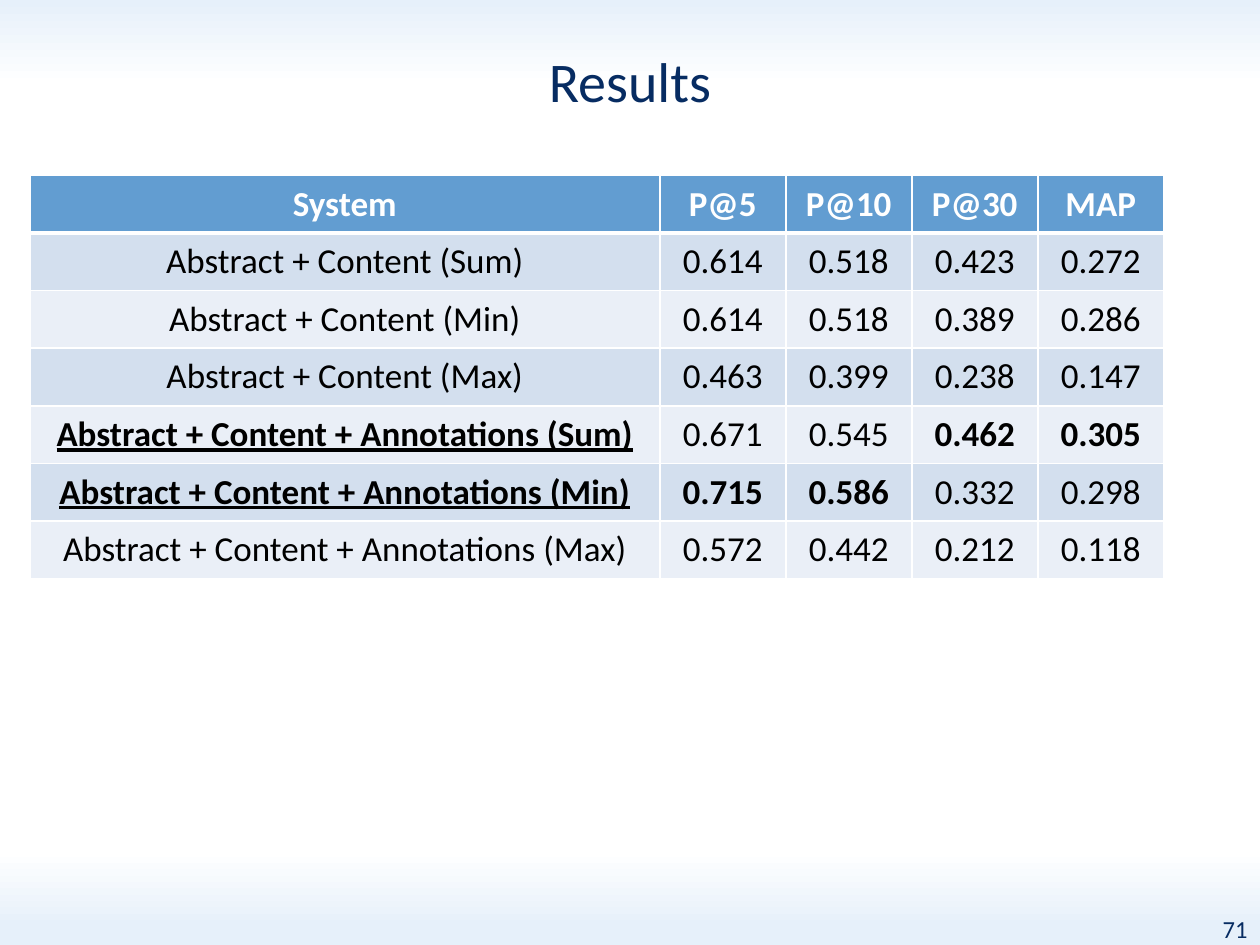
from lxml import etree
from pptx import Presentation
from pptx.dml.color import RGBColor
from pptx.enum.text import MSO_ANCHOR, PP_ALIGN
from pptx.oxml.ns import qn
from pptx.util import Cm, Pt

CENTER, RIGHT = PP_ALIGN.CENTER, PP_ALIGN.RIGHT
MIDDLE = MSO_ANCHOR.MIDDLE

NAVY = RGBColor(0x07, 0x2C, 0x62)
WHITE = RGBColor(0xFF, 0xFF, 0xFF)
BLACK = RGBColor(0x00, 0x00, 0x00)
PALE_BLUE = RGBColor(0xE6, 0xF0, 0xFA)
HEADER_BLUE = RGBColor(0x62, 0x9D, 0xD1)
BANDS = (RGBColor(0xD3, 0xDF, 0xEE), RGBColor(0xEA, 0xEF, 0xF7))

BACKGROUND_STOPS = ((0, PALE_BLUE), (9, WHITE), (90, WHITE), (98, PALE_BLUE))
COLUMN_WIDTHS = (12.7, 2.54, 2.54, 2.54, 2.54)
HEADERS = ("System", "P@5", "P@10", "P@30", "MAP")
RESULTS = (
    ("Abstract + Content (Sum)", 0.614, 0.518, 0.423, 0.272),
    ("Abstract + Content (Min)", 0.614, 0.518, 0.389, 0.286),
    ("Abstract + Content (Max)", 0.463, 0.399, 0.238, 0.147),
    ("Abstract + Content + Annotations (Sum)", 0.671, 0.545, 0.462, 0.305),
    ("Abstract + Content + Annotations (Min)", 0.715, 0.586, 0.332, 0.298),
    ("Abstract + Content + Annotations (Max)", 0.572, 0.442, 0.212, 0.118),
)


class SlideBuilder:
    font = "Calibri"
    spacing = 0.93

    def __init__(self, prs):
        self.slide = prs.slides.add_slide(prs.slide_layouts[5])

    def put_text(self, tf, text, size, color, align=CENTER, spacing=None,
                 bold=False, underline=False):
        p = tf.paragraphs[0]
        p.text = text
        p.alignment = align
        if spacing:
            p.line_spacing = spacing
        p.font.name = self.font
        p.font.size = Pt(size)
        p.font.color.rgb = color
        p.font.bold = bold
        p.font.underline = underline

    def background(self, stops):
        fill = self.slide.background.fill
        fill.gradient()
        fill.gradient_angle = 270
        gs_lst = next(self.slide.element.iter(qn("a:gsLst")))
        for gs in list(gs_lst):
            gs_lst.remove(gs)
        for percent, color in stops:
            gs = etree.SubElement(gs_lst, qn("a:gs"), pos=str(percent * 1000))
            etree.SubElement(gs, qn("a:srgbClr"), val=str(color))

    def title(self, text, left, top, width, height):
        sp = self.slide.shapes.title
        sp.left, sp.top, sp.width, sp.height = map(Cm, (left, top, width, height))
        tf = sp.text_frame
        tf.margin_left = tf.margin_top = tf.margin_right = tf.margin_bottom = 0
        tf.vertical_anchor = MIDDLE
        self.put_text(tf, text, 32, NAVY, spacing=self.spacing)

    def page_number(self, text, left, top, width, height):
        sp = self.slide.shapes.add_textbox(*map(Cm, (left, top, width, height)))
        sp.text_frame.word_wrap = True
        self.put_text(sp.text_frame, text, 14, NAVY, RIGHT)

    def borders(self, cell, bottom):
        tc_pr = cell._tc.get_or_add_tcPr()
        widths = (("a:lnL", 1), ("a:lnR", 1), ("a:lnT", 1), ("a:lnB", bottom))
        for i, (tag, width) in enumerate(widths):
            ln = etree.Element(qn(tag), w=str(Pt(width)))
            solid = etree.SubElement(ln, qn("a:solidFill"))
            etree.SubElement(solid, qn("a:srgbClr"), val=str(WHITE))
            tc_pr.insert(i, ln)

    def cell(self, cell, text, fill, color, bottom=1, **style):
        cell.fill.solid()
        cell.fill.fore_color.rgb = fill
        cell.vertical_anchor = MIDDLE
        self.put_text(cell.text_frame, text, 20, color, spacing=self.spacing, **style)
        self.borders(cell, bottom)

    def results_table(self, headers, results, left, top, widths, row_height):
        n_rows = len(results) + 1
        table = self.slide.shapes.add_table(
            n_rows, len(headers), Cm(left), Cm(top),
            Cm(sum(widths)), Cm(row_height * n_rows)).table
        for column, width in zip(table.columns, widths):
            column.width = Cm(width)
        for row in table.rows:
            row.height = Cm(row_height)
        for c, header in enumerate(headers):
            self.cell(table.cell(0, c), header, HEADER_BLUE, WHITE, bottom=3, bold=True)
        best = [max(column) for column in list(zip(*results))[1:]]
        for r, (system, *scores) in enumerate(results, 1):
            fill = BANDS[(r - 1) % 2]
            wins = [score == top_score for score, top_score in zip(scores, best)]
            self.cell(table.cell(r, 0), system, fill, BLACK,
                      bold=any(wins), underline=any(wins))
            for c, (score, win) in enumerate(zip(scores, wins), 1):
                self.cell(table.cell(r, c), f"{score:.3f}", fill, BLACK, bold=win)


def main():
    prs = Presentation()
    prs.slide_width, prs.slide_height = Cm(25.4), Cm(19.05)
    builder = SlideBuilder(prs)
    builder.background(BACKGROUND_STOPS)
    builder.title("Results", 0, 0.64, 25.4, 2.08)
    builder.page_number("71", 22.7, 18.31, 2.7, 0.71)
    builder.results_table(HEADERS, RESULTS, 0.6, 3.54, COLUMN_WIDTHS, 1.16)
    prs.save("out.pptx")


if __name__ == "__main__":
    main()
